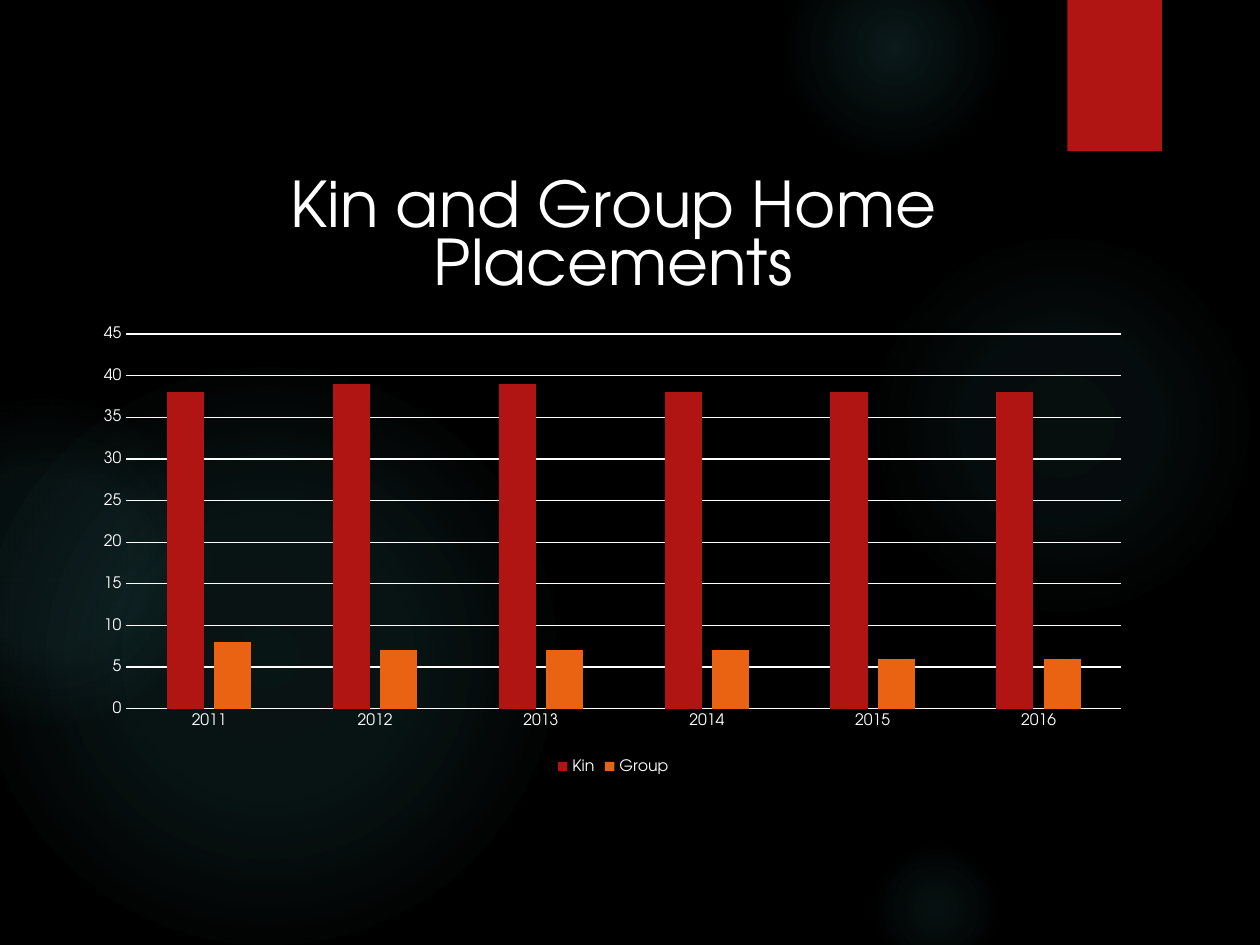
from pptx import Presentation
from pptx.chart.data import CategoryChartData
from pptx.dml.color import RGBColor
from pptx.enum import chart as ch, shapes
from pptx.oxml import parse_xml
from pptx.oxml.ns import nsdecls, qn
from pptx.util import Pt

FONT = "TeX Gyre Adventor"
WHITE, RED, ORANGE, TEAL = "FFFFFF", "B01513", "EA6312", "50B9C1"

# left, top, diameter, then (position %, opacity %) gradient stops
GLOWS = [
    (496, 132, 222, [(0, 7), (36, 6), (69, 0)]),
    (448, -36, 126, [(0, 14), (36, 7), (73, 0)]),
    (496, 480, 78, [(0, 9), (36, 5), (66, 0)]),
    (-12, 210, 330, [(0, 11), (36, 10), (75, 0)]),
    (-66, 228, 186, [(0, 8), (36, 8), (72, 0)]),
]
YEARS = ["2011", "2012", "2013", "2014", "2015", "2016"]
SERIES = [
    ("Kin", [38, 39, 39, 38, 38, 38], RED),
    ("Group", [8, 7, 7, 7, 6, 6], ORANGE),
]


def rgb(color):
    return RGBColor.from_string(color)


def set_fill(fill, color):
    fill.solid()
    fill.fore_color.rgb = rgb(color)


def set_font(font, size):
    font.name = FONT
    font.size = Pt(size)
    font.bold = False
    font.color.rgb = rgb(WHITE)


def set_line(line, color=WHITE):
    line.color.rgb = rgb(color)
    line.width = Pt(0.75)


def add_plain_shape(slide, kind, left, top, width, height):
    sp = slide.shapes.add_shape(kind, Pt(left), Pt(top), Pt(width), Pt(height))
    sp.shadow.inherit = False
    sp.line.fill.background()
    return sp


def add_glow(slide, left, top, size, stops):
    """Circle with a radial gradient that fades to transparent."""
    sp = add_plain_shape(slide, shapes.MSO_SHAPE.OVAL, left, top, size, size)
    sp.fill.gradient()
    stops_xml = "".join(
        f'<a:gs pos="{pos * 1000}"><a:srgbClr val="{TEAL}">'
        f'<a:alpha val="{alpha * 1000}"/></a:srgbClr></a:gs>'
        for pos, alpha in stops)
    gradient = parse_xml(
        f'<a:gradFill {nsdecls("a")}><a:gsLst>{stops_xml}</a:gsLst>'
        '<a:path path="circle"><a:fillToRect l="50000" t="50000" r="50000" '
        'b="50000"/></a:path></a:gradFill>')
    spPr = sp._element.spPr
    spPr.replace(spPr.find(qn("a:gradFill")), gradient)


def add_ribbon(slide):
    sp = add_plain_shape(slide, shapes.MSO_SHAPE.RECTANGLE, 610, 0, 54, 86.4)
    set_fill(sp.fill, RED)
    sp._element.spPr.find(qn("a:effectLst")).append(parse_xml(
        f'<a:outerShdw {nsdecls("a")} blurRad="{Pt(3)}" dist="{Pt(2)}" '
        'dir="5400000" rotWithShape="0"><a:srgbClr val="000000">'
        '<a:alpha val="45000"/></a:srgbClr></a:outerShdw>'))


def set_plot_layout(chart, x, y, w, h):
    """Place the inner plot area, as fractions of the chart."""
    plot_area = chart._chartSpace.chart.plotArea
    for old in plot_area.findall(qn("c:layout")):
        plot_area.remove(old)
    sizes = "".join(f'<c:{tag} val="{val}"/>'
                    for tag, val in zip("xywh", (x, y, w, h)))
    plot_area.insert(0, parse_xml(
        f'<c:layout {nsdecls("c")}><c:manualLayout>'
        '<c:layoutTarget val="inner"/><c:xMode val="edge"/>'
        f'<c:yMode val="edge"/>{sizes}</c:manualLayout></c:layout>'))


def style_axes(chart):
    for axis in (chart.category_axis, chart.value_axis):
        axis.major_tick_mark = ch.XL_TICK_MARK.NONE
        axis.minor_tick_mark = ch.XL_TICK_MARK.NONE
        set_font(axis.tick_labels.font, 9)
    set_line(chart.category_axis.format.line)
    value_axis = chart.value_axis
    value_axis.format.line.fill.background()
    value_axis.minimum_scale, value_axis.maximum_scale = 0, 45
    value_axis.major_unit = 5
    set_line(value_axis.major_gridlines.format.line)


def add_placements_chart(slide):
    data = CategoryChartData()
    data.categories = YEARS
    for name, values, _ in SERIES:
        data.add_series(name, values)
    chart = slide.shapes.add_chart(
        ch.XL_CHART_TYPE.COLUMN_CLUSTERED,
        Pt(48), Pt(82), Pt(605), Pt(363), data).chart
    set_font(chart.font, 10)

    chart.has_title = True
    p = chart.chart_title.text_frame.paragraphs[0]
    r = p.add_run()
    r.text = "Kin and Group Home Placements"
    set_font(r.font, 36)
    chart.chart_title.include_in_layout = False

    chart.has_legend = True
    chart.legend.position = ch.XL_LEGEND_POSITION.BOTTOM
    chart.legend.include_in_layout = False
    set_font(chart.legend.font, 9)

    plot = chart.plots[0]
    plot.gap_width, plot.overlap = 219, -27
    plot.vary_by_categories = False
    for series, (_, _, color) in zip(plot.series, SERIES):
        set_fill(series.format.fill, color)
    style_axes(chart)
    set_plot_layout(chart, 0.04, 0.3, 0.94, 0.59)


def main():
    prs = Presentation()
    prs.slide_width, prs.slide_height = Pt(720), Pt(540)
    slide = prs.slides.add_slide(prs.slide_layouts[6])
    set_fill(slide.background.fill, "000000")
    for glow in GLOWS:
        add_glow(slide, *glow)
    add_ribbon(slide)
    add_placements_chart(slide)
    prs.save("out.pptx")


if __name__ == "__main__":
    main()
